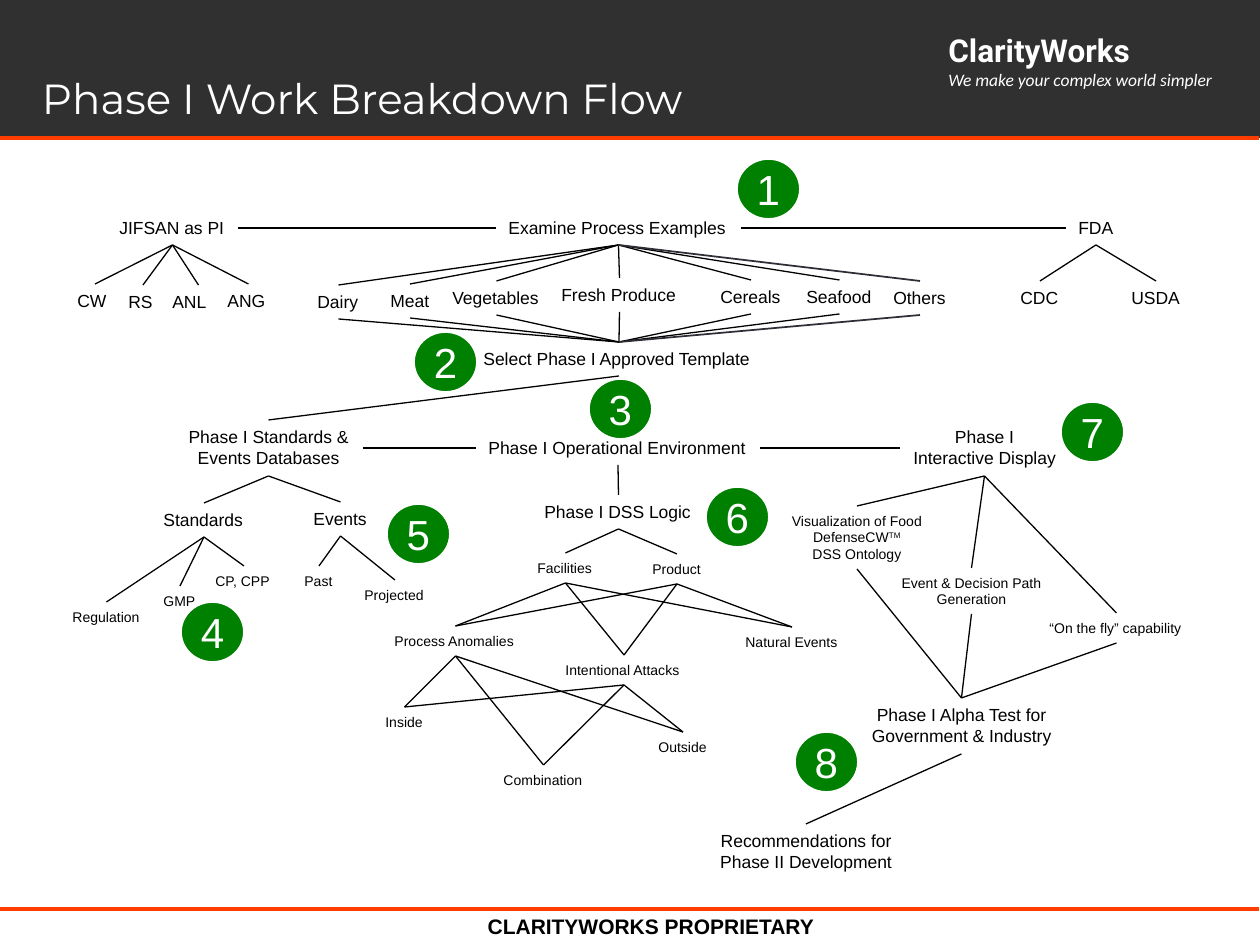
from lxml.etree import SubElement
from pptx import Presentation
from pptx.dml.color import RGBColor
from pptx.enum.shapes import MSO_CONNECTOR as CONNECTOR, MSO_SHAPE as SHAPE
from pptx.enum.text import MSO_ANCHOR as ANCHOR, PP_ALIGN as ALIGN
from pptx.oxml.ns import qn
from pptx.util import Emu, Pt

EMU_PER_PX = 914400 / 126
BLACK = RGBColor(0, 0, 0)
WHITE = RGBColor(255, 255, 255)
CHARCOAL = RGBColor(0x30, 0x30, 0x30)
ORANGE = RGBColor(0xFF, 0x3D, 0x00)
GREEN = RGBColor(0x00, 0x80, 0x00)
SLATE = RGBColor(0x30, 0x2D, 0x37)
TOP, LEFT, BOTTOM, RIGHT = range(4)


def px(*values):
    return [Emu(round(value * EMU_PER_PX)) for value in values]


def add_line(start, end, color, width):
    line = slide.shapes.add_connector(CONNECTOR.STRAIGHT, *px(*start, *end))
    line.line.color.rgb = color
    line.line.width = Pt(width)
    SubElement(line._element.spPr, qn("a:effectLst"))
    return line


presentation = Presentation()
presentation.slide_width, presentation.slide_height = px(1260, 945)
slide = presentation.slides.add_slide(presentation.slide_layouts[6])

header = slide.shapes.add_shape(SHAPE.RECTANGLE, *px(0, 0, 1260, 138))
header.shadow.inherit = False
header.fill.solid()
header.fill.fore_color.rgb = CHARCOAL
header.line.fill.background()
for y in (138, 909):
    add_line((0, y), (1259, y), ORANGE, 2)

brand = slide.shapes.add_textbox(*px(936, 25, 290, 72)).text_frame
brand.text = "ClarityWorks\nWe make your complex world simpler"
name, tagline = brand.paragraphs
name.font.size, name.font.name, name.font.bold = Pt(18), "Roboto", True
tagline.font.size, tagline.font.name, tagline.font.italic = Pt(10), "Calibri", True
for paragraph in brand.paragraphs:
    paragraph.font.color.rgb = WHITE

title = slide.shapes.add_textbox(*px(42, 14, 844, 115)).text_frame
title.word_wrap = True
title.margin_left = 0
title.vertical_anchor = ANCHOR.BOTTOM
title.text = "Phase I Work Breakdown Flow"
heading = title.paragraphs[0]
heading.line_spacing = 0.85
heading.font.size, heading.font.name = Pt(24), "Montserrat"
heading.font.color.rgb = WHITE

footer = slide.shapes.add_textbox(*px(410, 879, 482, 66)).text_frame
footer.word_wrap = True
footer.vertical_anchor = ANCHOR.BOTTOM
footer.text = "CLARITYWORKS PROPRIETARY"
notice = footer.paragraphs[0]
notice.alignment = ALIGN.CENTER
notice.font.size, notice.font.name, notice.font.bold = Pt(12), "Arial", True
notice.font.color.rgb = BLACK

HEIGHTS = {(10, 1): 34, (10, 2): 56, (8, 1): 30, (8, 2): 46, (8, 3): 63}
steps = [
    ("Examine", "Examine Process Examples", 496, 211, 245, 10, 1),
    ("Dairy", "Dairy", 305, 285, 67, 10, 1),
    ("Meat", "Meat", 378, 284, 64, 10, 1),
    ("Vegetables", "Vegetables", 440, 281, 113, 10, 1),
    ("Fresh", "Fresh Produce", 549, 278, 141, 10, 1),
    ("Cereals", "Cereals", 708, 280, 86, 10, 1),
    ("Seafood", "Seafood", 794, 280, 91, 10, 1),
    ("Others", "Others", 881, 281, 78, 10, 1),
    ("Select", "Select Phase I Approved Template", 471, 342, 296, 10, 1),
    ("FDA", "FDA", 1066, 211, 60, 10, 1),
    ("CDC", "CDC", 1008, 281, 64, 10, 1),
    ("USDA", "USDA", 1119, 281, 74, 10, 1),
    ("JIFSAN", "JIFSAN as PI", 107, 211, 131, 10, 1),
    ("CW", "CW", 65, 284, 60, 10, 1),
    ("RS", "RS", 116, 285, 54, 10, 1),
    ("ANL", "ANL", 160, 285, 77, 10, 1),
    ("ANG", "ANG", 215, 284, 67, 10, 1),
    ("Databases", "Phase I Standards & Events Databases", 174, 420, 189, 10, 2),
    ("Standards", "Standards", 151, 503, 106, 10, 1),
    ("Events", "Events", 301, 502, 79, 10, 1),
    ("Regulation", "Regulation", 60, 602, 93, 8, 1),
    ("GMP", "GMP", 151, 586, 58, 8, 1),
    ("CP", "CP, CPP", 203, 566, 82, 8, 1),
    ("Past", "Past", 292, 566, 54, 8, 1),
    ("Projected", "Projected", 352, 580, 86, 8, 1),
    ("Operational", "Phase I Operational Environment", 476, 431, 284, 10, 1),
    ("Logic", "Phase I DSS Logic", 532, 495, 173, 10, 1),
    ("Facilities", "Facilities", 525, 553, 81, 8, 1),
    ("Product", "Product", 640, 554, 74, 8, 1),
    ("Anomalies", "Process Anomalies", 382, 626, 147, 8, 1),
    ("Attacks", "Intentional Attacks", 553, 655, 142, 8, 1),
    ("Natural", "Natural Events", 733, 627, 118, 8, 1),
    ("Inside", "Inside", 373, 707, 63, 8, 1),
    ("Outside", "Outside", 646, 732, 74, 8, 1),
    ("Combination", "Combination", 491, 765, 105, 8, 1),
    ("Display", "Phase I\nInteractive Display", 900, 420, 169, 10, 2),
    ("Ontology", "Visualization of Food DefenseCW\nDSS Ontology", 764, 506, 186, 8, 3),
    ("Path", "Event & Decision Path Generation", 879, 568, 185, 8, 2),
    ("Fly", "“On the fly” capability", 1037, 613, 159, 8, 1),
    ("Alpha", "Phase I Alpha Test for Government & Industry", 819, 698, 285, 10, 2),
    ("Recommend", "Recommendations for Phase II Development", 692, 824, 228, 10, 2),
]
boxes = {}
for key, text, left, top, width, size, lines in steps:
    box = slide.shapes.add_textbox(*px(left, top, width, HEIGHTS[size, lines]))
    boxes[key] = box
    box.text_frame.word_wrap = lines > 1
    box.text_frame.text = text
    if key == "Ontology":
        trademark = box.text_frame.paragraphs[0].add_run()
        trademark.text = "TM"
        trademark._r.get_or_add_rPr().set("baseline", "30000")
    for paragraph in box.text_frame.paragraphs:
        paragraph.alignment = ALIGN.CENTER if lines > 1 else ALIGN.LEFT
        paragraph.font.size, paragraph.font.name = Pt(size), "Arial"
        paragraph.font.color.rgb = BLACK

foods = ["Dairy", "Meat", "Vegetables", "Fresh", "Cereals", "Seafood", "Others"]
children = {
    "Examine": foods,
    **{food: ["Select"] for food in foods},
    "Select": ["Databases"],
    "JIFSAN": ["CW", "RS", "ANL", "ANG"],
    "FDA": ["CDC", "USDA"],
    "Databases": ["Standards", "Events"],
    "Standards": ["Regulation", "GMP", "CP"],
    "Events": ["Past", "Projected"],
    "Operational": ["Logic"],
    "Logic": ["Facilities", "Product"],
    "Facilities": ["Anomalies", "Attacks", "Natural"],
    "Product": ["Anomalies", "Attacks", "Natural"],
    "Anomalies": ["Inside", "Combination", "Outside"],
    "Attacks": ["Inside", "Combination", "Outside"],
    "Display": ["Ontology", "Path", "Fly"],
    "Ontology": ["Alpha"],
    "Path": ["Alpha"],
    "Fly": ["Alpha"],
    "Alpha": ["Recommend"],
}
neighbours = [("JIFSAN", "Examine"), ("Examine", "FDA"),
              ("Databases", "Operational"), ("Operational", "Display")]
links = [(parent, BOTTOM, child, TOP) for parent in children for child in children[parent]]
links += [(first, RIGHT, second, LEFT) for first, second in neighbours]
for first, first_side, second, second_side in links:
    color, width = (SLATE, 1) if "Others" in (first, second) else (BLACK, 0.75)
    link = add_line((0, 0), (0, 0), color, width)
    link.begin_connect(boxes[first], first_side)
    link.end_connect(boxes[second], second_side)

badges = [(737, 159), (414, 332), (589, 379), (181, 602),
          (387, 504), (706, 487), (1061, 402), (795, 732)]
for number, (left, top) in enumerate(badges, 1):
    badge = slide.shapes.add_shape(SHAPE.OVAL, *px(left, top, 63, 60))
    badge.shadow.inherit = False
    badge.fill.solid()
    badge.fill.fore_color.rgb = GREEN
    badge.line.color.rgb = WHITE
    badge.line.width = Pt(1)
    badge.text_frame.word_wrap = False
    badge.text_frame.vertical_anchor = ANCHOR.MIDDLE
    badge.text_frame.text = str(number)
    paragraph = badge.text_frame.paragraphs[0]
    paragraph.alignment = ALIGN.CENTER
    paragraph.font.size, paragraph.font.name = Pt(24), "Arial"
    paragraph.font.color.rgb = WHITE

presentation.save("out.pptx")
